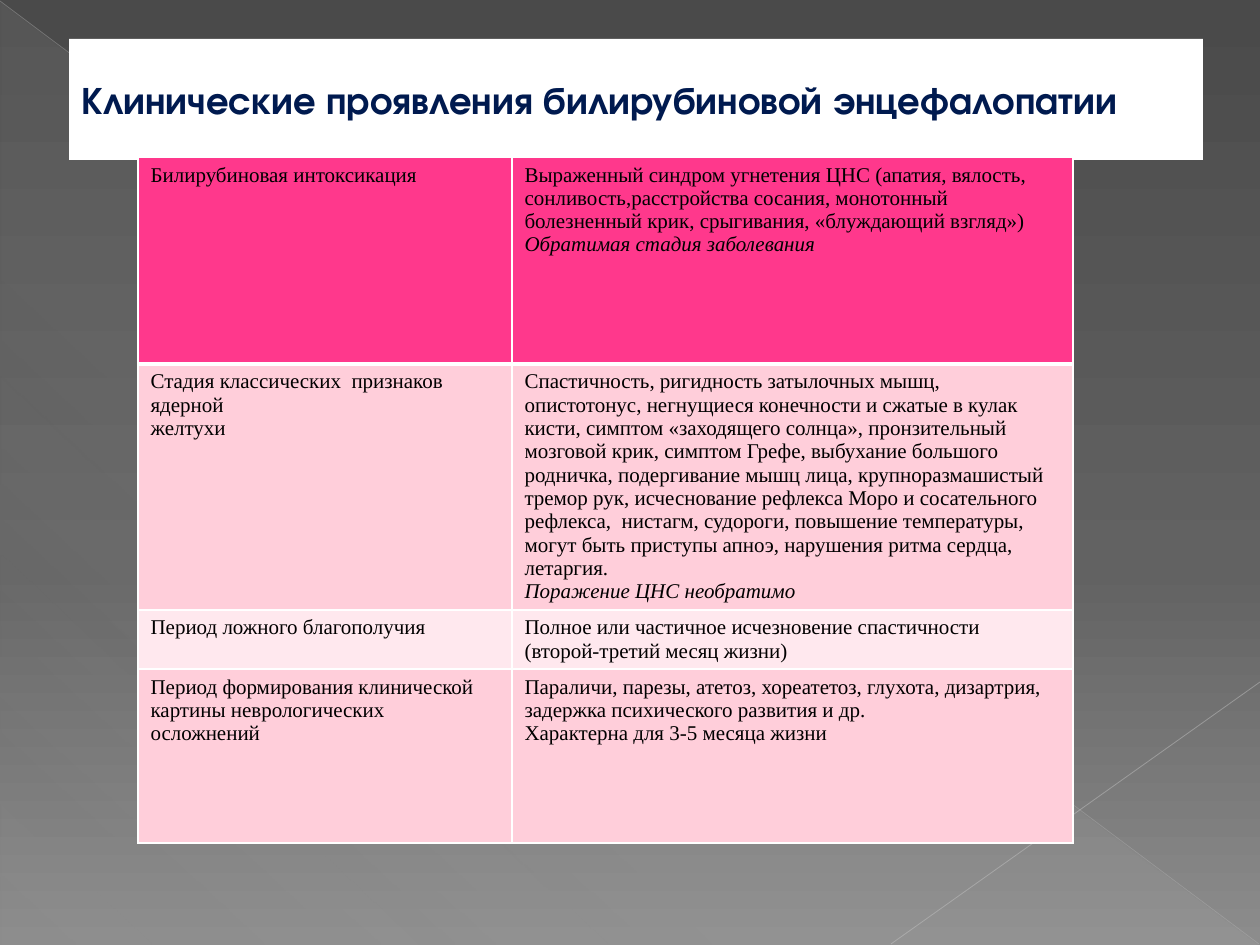
"""Builds a slide with a table of the stages of bilirubin encephalopathy."""
from dataclasses import dataclass

from lxml import etree
from pptx import Presentation
from pptx.dml.color import RGBColor
from pptx.enum.shapes import MSO_CONNECTOR, MSO_SHAPE
from pptx.enum.text import MSO_ANCHOR, PP_ALIGN
from pptx.oxml.ns import qn
from pptx.util import Emu, Pt

TITLE = "Клинические проявления билирубиновой энцефалопатии"
STAGES = [
    (["Билирубиновая интоксикация"],
     ["Выраженный синдром угнетения ЦНС (апатия, вялость, сонливость,расстройства сосания, "
      "монотонный болезненный крик, срыгивания, «блуждающий взгляд»)"],
     "Обратимая стадия заболевания"),
    (["Стадия классических  признаков ядерной", "желтухи"],
     ["Спастичность, ригидность затылочных мышц, опистотонус, негнущиеся конечности и сжатые "
      "в кулак кисти, симптом «заходящего солнца», пронзительный мозговой крик, симптом Грефе, "
      "выбухание большого родничка, подергивание мышц лица, крупноразмашистый тремор рук, "
      "исчеснование рефлекса Моро и сосательного рефлекса,  нистагм, судороги, повышение "
      "температуры, могут быть приступы апноэ, нарушения ритма сердца, летаргия."],
     "Поражение ЦНС необратимо"),
    (["Период ложного благополучия"],
     ["Полное или частичное исчезновение спастичности (второй-третий месяц жизни)"],
     None),
    (["Период формирования клинической картины неврологических осложнений"],
     ["Параличи, парезы, атетоз, хореатетоз, глухота, дизартрия, задержка психического "
      "развития и др.", "Характерна для 3-5 месяца жизни"],
     None),
]
COLUMN_WIDTHS = (374, 561)
ROW_HEIGHTS = (207, 246, 59, 174)
PAGE_SIZE = (1260, 945)
TITLE_BOX = (69, 39, 1134, 121)
TABLE_ORIGIN = (138, 157)
TRIANGLE_BOX = (1, 2, 1258, 943)
RAYS = [((0, 1, 1259, 944), "BFBFBF", 0.39, 35),
        ((1260, 682, 891, 944), "C6C6C6", 0.47, 45)]
EMU_PER_PX = 914400 / 126


@dataclass(frozen=True)
class Theme:
    background: tuple = ((0, "4A4A4A", 100), (60, "626262", 100), (100, "8C8C8C", 100))
    triangle: tuple = ((0, "D2D2D2", 10), (70, "D2D2D2", 8), (100, "D2D2D2", 1))
    white: str = "FFFFFF"
    header: str = "FF388C"
    bands: tuple = ("FFCEDA", "FFE8EE")
    title_font: str = "TeX Gyre Adventor"
    title_ink: str = "001A4F"
    title_size: int = 22
    body_font: str = "Times New Roman"
    body_ink: str = "000000"
    body_size: int = 12
    border: int = 1
    header_border: int = 3


THEME = Theme()


def px(*values):
    return [Emu(round(value * EMU_PER_PX)) for value in values]


def add_node(parent, tag, **attributes):
    texts = {key: str(value) for key, value in attributes.items()}
    return etree.SubElement(parent, qn(tag), texts)


def set_gradient(holder, stops, angle):
    solid = holder.find(".//" + qn("a:solidFill"))
    gradient = etree.Element(qn("a:gradFill"), rotWithShape="1")
    stop_list = add_node(gradient, "a:gsLst")
    for position, color, opacity in stops:
        stop = add_node(stop_list, "a:gs", pos=position * 1000)
        add_node(add_node(stop, "a:srgbClr", val=color), "a:alpha", val=opacity * 1000)
    add_node(gradient, "a:lin", ang=angle * 60000, scaled=0)
    solid.getparent().replace(solid, gradient)


def style_span(span, color, **formats):
    for name, value in formats.items():
        setattr(span.font, name, value)
    span.font.color.rgb = RGBColor.from_string(color)


def add_backdrop(page):
    page.background.fill.solid()
    set_gradient(page.element, THEME.background, 90)
    triangle = page.shapes.add_shape(MSO_SHAPE.RIGHT_TRIANGLE, *px(*TRIANGLE_BOX))
    triangle.shadow.inherit = False
    triangle.fill.solid()
    set_gradient(triangle.element.spPr, THEME.triangle, 133)
    triangle.line.fill.background()
    for ends, color, width, opacity in RAYS:
        ray = page.shapes.add_connector(MSO_CONNECTOR.STRAIGHT, *px(*ends))
        ray.line.width = Pt(width)
        ray.line.color.rgb = RGBColor.from_string(color)
        properties = ray.element.spPr
        add_node(properties.find(".//" + qn("a:srgbClr")), "a:alpha", val=opacity * 1000)
        add_node(properties, "a:effectLst")


def add_title(page):
    title = page.shapes.title
    title.element.getparent().append(title.element)
    title.left, title.top, title.width, title.height = px(*TITLE_BOX)
    title.fill.solid()
    title.fill.fore_color.rgb = RGBColor.from_string(THEME.white)
    title.text_frame.vertical_anchor = MSO_ANCHOR.MIDDLE
    para = title.text_frame.paragraphs[0]
    para.alignment = PP_ALIGN.LEFT
    span = para.add_run()
    span.text = TITLE
    style_span(span, THEME.title_ink, name=THEME.title_font,
               size=Pt(THEME.title_size), bold=True)


def set_borders(cell, row):
    properties = cell._tc.get_or_add_tcPr()
    thick_side = {0: "B", 1: "T"}.get(row)
    for side in "LRTB":
        width = THEME.header_border if side == thick_side else THEME.border
        line = add_node(properties, "a:ln" + side, w=Pt(width))
        add_node(add_node(line, "a:solidFill"), "a:srgbClr", val=THEME.white)


def fill_cell(cell, row, texts, remark):
    set_borders(cell, row)
    cell.fill.solid()
    color = THEME.bands[(row - 1) % 2] if row else THEME.header
    cell.fill.fore_color.rgb = RGBColor.from_string(color)
    lines = [(text, False) for text in texts] + ([(remark, True)] if remark else [])
    frame = cell.text_frame
    for index, (text, italic) in enumerate(lines):
        para = frame.add_paragraph() if index else frame.paragraphs[0]
        span = para.add_run()
        span.text = text
        style_span(span, THEME.body_ink, name=THEME.body_font,
                   size=Pt(THEME.body_size), bold=False, italic=italic)


def add_stage_table(page):
    size = (sum(COLUMN_WIDTHS), sum(ROW_HEIGHTS))
    table = page.shapes.add_table(len(STAGES), len(COLUMN_WIDTHS),
                                  *px(*TABLE_ORIGIN, *size)).table
    for column, width in zip(table.columns, px(*COLUMN_WIDTHS)):
        column.width = width
    for row, height in zip(table.rows, px(*ROW_HEIGHTS)):
        row.height = height
    for row, (stage, signs, remark) in enumerate(STAGES):
        fill_cell(table.cell(row, 0), row, stage, None)
        fill_cell(table.cell(row, 1), row, signs, remark)


def main():
    deck = Presentation()
    deck.slide_width, deck.slide_height = px(*PAGE_SIZE)
    page = deck.slides.add_slide(deck.slide_layouts[5])
    add_backdrop(page)
    add_title(page)
    add_stage_table(page)
    deck.save("out.pptx")


if __name__ == "__main__":
    main()
